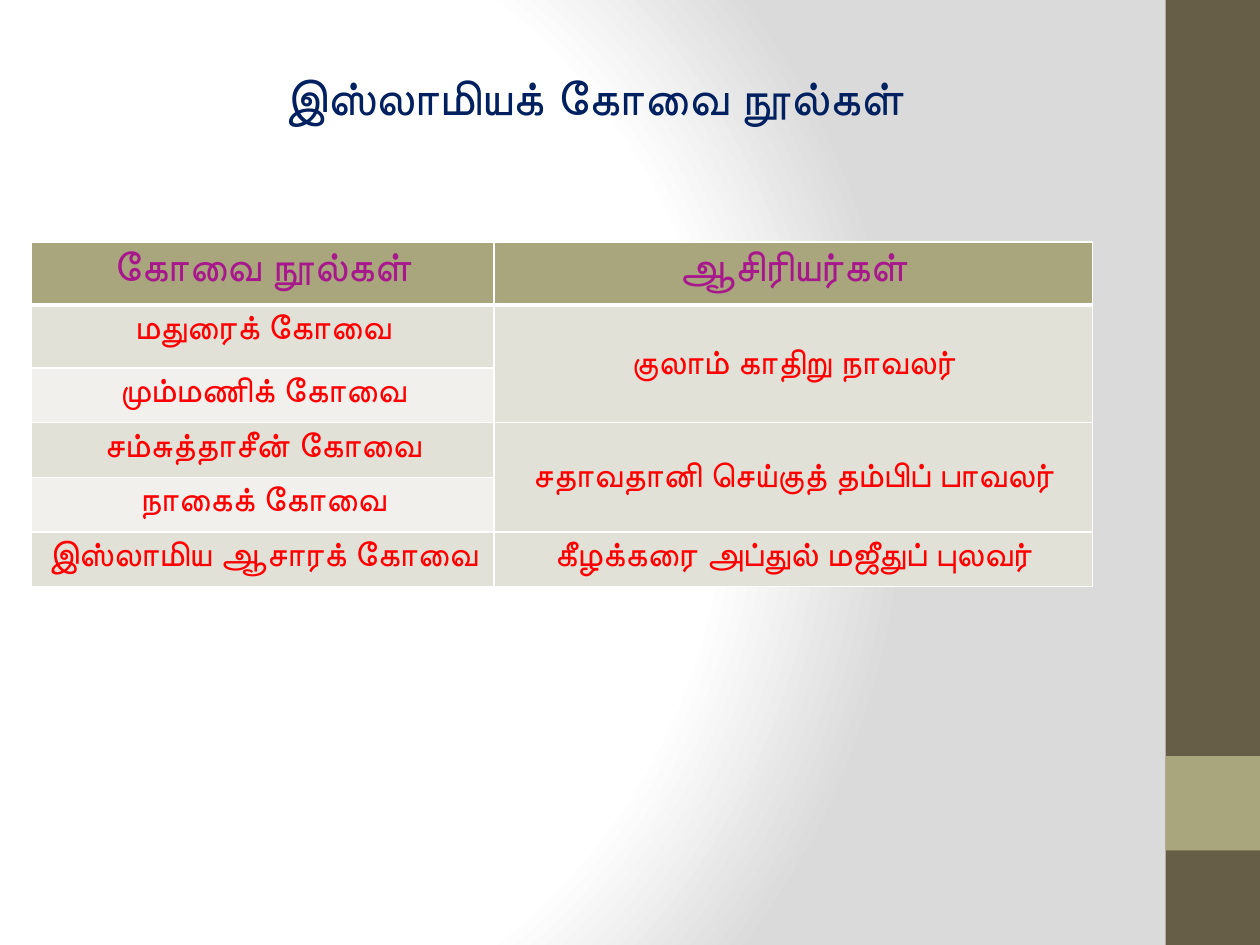
from lxml import etree
from pptx import Presentation
from pptx.dml.color import RGBColor
from pptx.enum.shapes import MSO_SHAPE
from pptx.enum.text import MSO_ANCHOR, MSO_AUTO_SIZE, PP_ALIGN
from pptx.oxml import parse_xml
from pptx.oxml.ns import qn
from pptx.util import Inches, Pt

RECTANGLE = MSO_SHAPE.RECTANGLE
TOP, MIDDLE = MSO_ANCHOR.TOP, MSO_ANCHOR.MIDDLE
CENTER = PP_ALIGN.CENTER
GROW = MSO_AUTO_SIZE.SHAPE_TO_FIT_TEXT
TITLE_ONLY = 5

WIDTH, HEIGHT = Inches(10), Inches(7.5)
FONT = "Noto Sans Mono"
COLORS = {
    "white": "FFFFFF",
    "gray": "DADADA",
    "brown": "675E47",
    "olive": "A9A57C",
    "band_dark": "E2E1D7",
    "band_light": "F1F0EC",
    "title": "002060",
    "header": "A8188D",
    "body": "FF0000",
}
TITLE = "இஸ்லாமியக் கோவை நூல்கள்"
HEADERS = ("கோவை நூல்கள்", "ஆசிரியர்கள்")
WORKS_BY_AUTHOR = [
    ("குலாம் காதிறு நாவலர்", ["மதுரைக் கோவை", "மும்மணிக் கோவை"]),
    ("சதாவதானி செய்குத் தம்பிப் பாவலர்", ["சம்சுத்தாசீன் கோவை", "நாகைக் கோவை"]),
    ("கீழக்கரை அப்துல் மஜீதுப் புலவர்", ["இஸ்லாமிய ஆசாரக் கோவை"]),
]
COLUMN_SHARES = (0.436, 0.564)
ROW_HEIGHTS = (0.41, 0.5, 0.41, 0.41, 0.41, 0.41)


def color(name):
    return RGBColor.from_string(COLORS[name])


def write(text_frame, text, size, color_name, bold):
    text_frame.text = text
    paragraph = text_frame.paragraphs[0]
    paragraph.alignment = CENTER
    font = paragraph.runs[0].font
    font.name, font.size, font.bold = FONT, Pt(size), bold
    font.color.rgb = color(color_name)


def paint_background(slide):
    fill = slide.background.fill
    fill.gradient()
    gradient = slide.element.find(".//" + qn("a:gradFill"))
    stops = "".join(
        f'<a:gs pos="{position}000"><a:srgbClr val="{COLORS[name]}"/></a:gs>'
        for position, name in ((0, "white"), (75, "white"), (100, "gray"))
    )
    gradient.getparent().replace(gradient, parse_xml(
        '<a:gradFill xmlns:a="http://schemas.openxmlformats.org/drawingml/2006/main" '
        f'rotWithShape="1"><a:gsLst>{stops}</a:gsLst><a:path path="circle">'
        '<a:fillToRect l="20000" t="50000" r="100000" b="50000"/></a:path></a:gradFill>'
    ))


def add_side_band(slide, left, top, width, height):
    parts = (("brown", top, height), ("olive", top + int(height * 0.8), width))
    for name, part_top, part_height in parts:
        shape = slide.shapes.add_shape(RECTANGLE, left, part_top, width, part_height)
        shape.shadow.inherit = False
        shape.fill.solid()
        shape.fill.fore_color.rgb = color(name)
        shape.line.fill.background()


def place_title(slide, left, top, width, height):
    title = slide.shapes.title
    title.left, title.top, title.width, title.height = left, top, width, height
    text_frame = title.text_frame
    write(text_frame, TITLE, 28, "title", True)
    text_frame.word_wrap = True
    text_frame.auto_size = GROW
    text_frame.vertical_anchor = TOP


def add_borders(cell, bottom_width):
    properties = cell._tc.get_or_add_tcPr()
    for side, width in (("L", 1), ("R", 1), ("T", 1), ("B", bottom_width)):
        line = etree.SubElement(properties, qn(f"a:ln{side}"), w=str(Pt(width)))
        fill = etree.SubElement(line, qn("a:solidFill"))
        etree.SubElement(fill, qn("a:srgbClr"), val=COLORS["white"])


def style_cell(cell, fill_name, bottom_width=1):
    add_borders(cell, bottom_width)
    cell.fill.solid()
    cell.fill.fore_color.rgb = color(fill_name)


def add_works_table(slide, left, top, width, height):
    frame = slide.shapes.add_table(len(ROW_HEIGHTS), len(HEADERS), left, top, width, height)
    table = frame.table
    for column, share in zip(table.columns, COLUMN_SHARES):
        column.width = int(width * share)
    for row, row_height in zip(table.rows, ROW_HEIGHTS):
        row.height = Inches(row_height)

    for column, header in enumerate(HEADERS):
        cell = table.cell(0, column)
        style_cell(cell, "olive", 3)
        write(cell.text_frame, header, 24, "header", True)

    row = 1
    for author, works in WORKS_BY_AUTHOR:
        author_cell = table.cell(row, 1)
        last_row = row + len(works) - 1
        if last_row > row:
            author_cell.merge(table.cell(last_row, 1))
            author_cell.vertical_anchor = MIDDLE
        write(author_cell.text_frame, author, 20, "body", False)
        for work in works:
            work_cell = table.cell(row, 0)
            style_cell(work_cell, "band_dark" if row % 2 else "band_light")
            style_cell(table.cell(row, 1), "band_dark")
            write(work_cell.text_frame, work, 20, "body", False)
            row += 1


def main():
    presentation = Presentation()
    presentation.slide_width, presentation.slide_height = WIDTH, HEIGHT
    slide = presentation.slides.add_slide(presentation.slide_layouts[TITLE_ONLY])
    paint_background(slide)
    add_side_band(slide, int(WIDTH * 0.925), 0, int(WIDTH * 0.075), HEIGHT)
    place_title(slide, Inches(1.22), Inches(0.48), Inches(6.99), Inches(0.57))
    add_works_table(slide, Inches(0.25), Inches(1.92), Inches(8.42), Inches(sum(ROW_HEIGHTS)))
    presentation.save("out.pptx")


if __name__ == "__main__":
    main()
